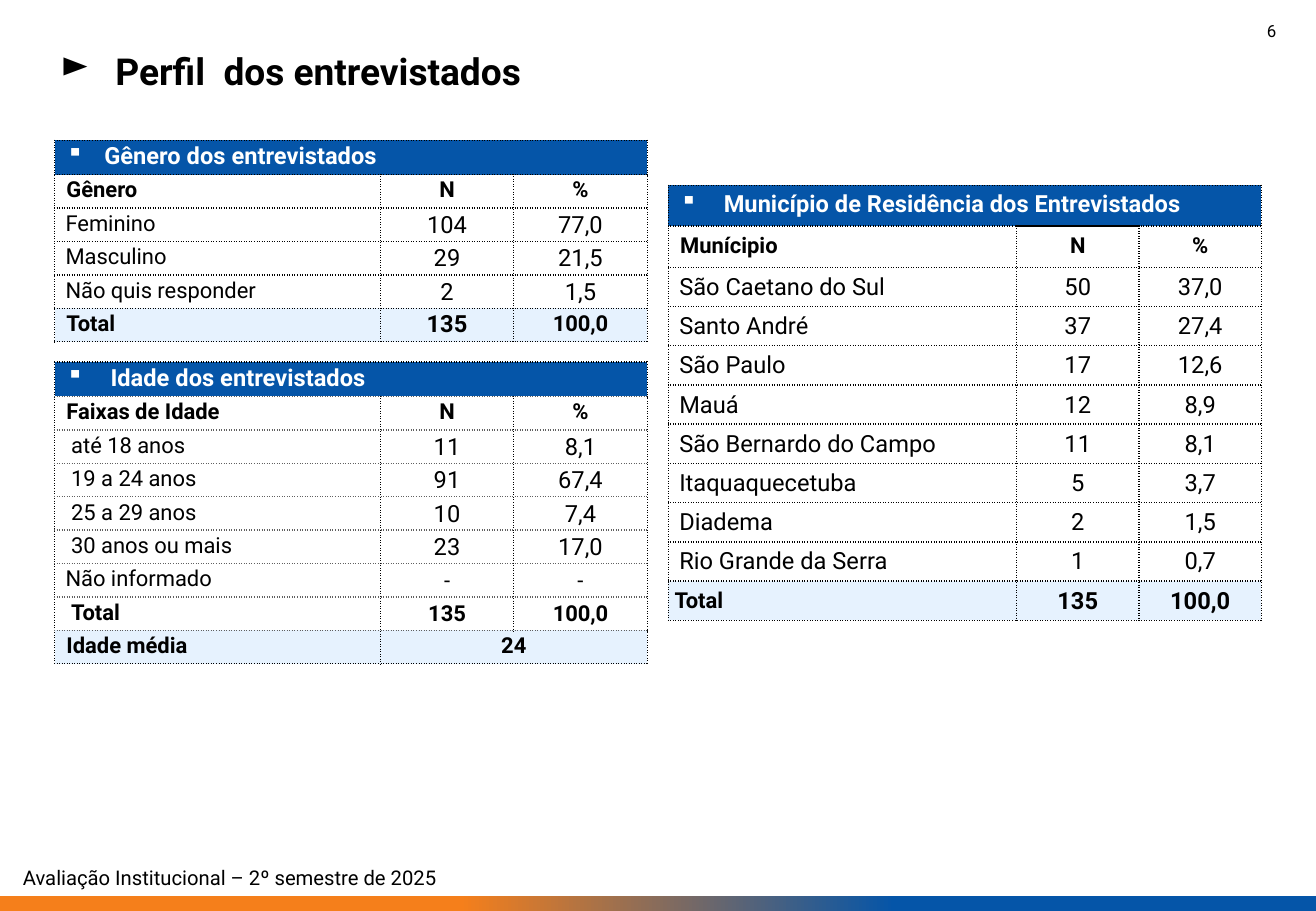
from dataclasses import dataclass
from typing import Any

from lxml import etree
from pptx import Presentation
from pptx import util as u
from pptx.dml import color
from pptx.enum import shapes, text
from pptx.oxml import ns

COLORS = {
    "black": "000000",
    "white": "FFFFFF",
    "gray": "606060",
    "blue": "0555A8",
    "orange": "F57F1B",
    "pale": "E6F2FE",
}
FONT = "Roboto"
LEFT, CENTER, RIGHT = text.PP_ALIGN.LEFT, text.PP_ALIGN.CENTER, text.PP_ALIGN.RIGHT
MIDDLE = text.MSO_ANCHOR.MIDDLE
HEADER_INSET = 0.25
TIGHT_INSET = 0.02


@dataclass(frozen=True)
class Row:
    label: str
    values: tuple[str, ...]
    bold: bool = False
    fill: str = "white"
    inset: float = 0.23
    label_size: int = 13
    value_sizes: tuple[int, ...] = (14, 14)
    label_spacing: float = 0.8
    value_spacing: float = 1.0


@dataclass(frozen=True)
class ProfileTable:
    title: str
    title_indent: float
    left: float
    top: float
    widths: tuple[float, float, float]
    title_height: float
    row_height: float
    rows: list[Row]
    heading_height: float
    line: str = "black"
    solid_above_n: bool = False


def heading(label: str) -> Row:
    return Row(label, ("N", "%"), True, inset=HEADER_INSET,
               value_sizes=(13, 13), value_spacing=0.8)


def city(name: str, count: str, share: str) -> Row:
    return Row(name, (count, share), label_size=14, label_spacing=1.0)


def age(label: str, count: str, share: str) -> Row:
    return Row(label, (count, share), inset=0.35)


LEFT_GRID: dict[str, Any] = {
    "left": 1.14, "widths": (6.81, 2.79, 2.79),
    "title_height": 0.72, "heading_height": 0.7, "row_height": 0.7,
}

TABLES = [
    ProfileTable("Gênero dos entrevistados", 0.79, top=2.93, **LEFT_GRID, rows=[
        heading("Gênero"),
        Row("Feminino", ("104", "77,0")),
        Row("Masculino", ("29", "21,5")),
        Row("Não quis responder", ("2", "1,5")),
        Row("Total", ("135", "100,0"), True, "pale", HEADER_INSET,
            value_sizes=(14, 13), value_spacing=0.8),
    ]),
    ProfileTable("Idade dos entrevistados", 0.92, top=7.57, line="gray", **LEFT_GRID, rows=[
        heading("Faixas de Idade"),
        age("até 18 anos", "11", "8,1"),
        age("19 a 24 anos", "91", "67,4"),
        age("25 a 29 anos", "10", "7,4"),
        age("30 anos ou mais", "23", "17,0"),
        Row("Não informado", ("-", "-"), value_sizes=(13, 13)),
        Row("Total", ("135", "100,0"), True, inset=0.35, value_sizes=(13, 13)),
        Row("Idade média", ("24",), True, "pale", HEADER_INSET,
            value_sizes=(13,), value_spacing=0.8),
    ]),
    ProfileTable(
        "Município de Residência dos Entrevistados", 0.91, 13.97, 3.87, (7.28, 2.56, 2.56),
        0.86, 0.82, heading_height=0.86, solid_above_n=True, rows=[
            heading("Munícipio"),
            city("São Caetano do Sul", "50", "37,0"),
            city("Santo André", "37", "27,4"),
            city("São Paulo", "17", "12,6"),
            city("Mauá", "12", "8,9"),
            city("São Bernardo do Campo", "11", "8,1"),
            city("Itaquaquecetuba", "5", "3,7"),
            city("Diadema", "2", "1,5"),
            city("Rio Grande da Serra", "1", "0,7"),
            Row("Total", ("135", "100,0"), True, "pale", 0.13, label_spacing=1.0),
        ]),
]


def rgb(name: str) -> color.RGBColor:
    return color.RGBColor.from_string(COLORS[name])


def apply(target: Any, values: dict[str, Any]) -> None:
    for name, value in values.items():
        setattr(target, name, value)


def write(paragraph: Any, words: str, size: int, bold: bool = False, ink: str = "black",
          align: Any = LEFT, spacing: float = 1.0) -> None:
    apply(paragraph, {"alignment": align, "line_spacing": spacing})
    run = paragraph.add_run()
    run.text = words
    apply(run.font, {"name": FONT, "size": u.Pt(size), "bold": bold})
    run.font.color.rgb = rgb(ink)


def add_bullet(paragraph: Any, mark: str, ink: str, margin: float, hanging: float) -> None:
    properties = paragraph._p.get_or_add_pPr()
    properties.set("marL", str(u.Cm(margin)))
    properties.set("indent", str(-u.Cm(hanging)))
    tint = etree.SubElement(properties, ns.qn("a:buClr"))
    etree.SubElement(tint, ns.qn("a:srgbClr"), val=COLORS[ink])
    etree.SubElement(properties, ns.qn("a:buChar"), char=mark)


def add_border(cell: Any, edge: str, ink: str, width: float, dash: str) -> None:
    line = etree.SubElement(cell._tc.get_or_add_tcPr(), ns.qn(f"a:{edge}"), w=str(u.Pt(width)))
    fill = etree.SubElement(line, ns.qn("a:solidFill"))
    etree.SubElement(fill, ns.qn("a:srgbClr"), val=COLORS[ink])
    etree.SubElement(line, ns.qn("a:prstDash"), val=dash)


def style_cell(cell: Any, row: int, column: int, last_row: int, spec: ProfileTable) -> None:
    outer = {"lnL": column == 0, "lnR": column == 2, "lnT": row == 0, "lnB": row == last_row}
    for edge, is_outer in outer.items():
        if edge == "lnL" and cell.is_spanned:
            continue
        solid = spec.solid_above_n and (row, column, edge) == (1, 1, "lnT")
        inner_rule = edge in ("lnT", "lnB") and not is_outer and row > 0
        add_border(cell, edge, spec.line if inner_rule else "black",
                   0.75 if is_outer else 1, "solid" if solid else "sysDot")
    fill = "blue" if row == 0 else spec.rows[row - 1].fill
    cell.fill.solid()
    cell.fill.fore_color.rgb = rgb(fill)
    apply(cell, {"vertical_anchor": MIDDLE, "margin_left": u.Cm(TIGHT_INSET),
                 "margin_right": u.Cm(TIGHT_INSET), "margin_top": u.Cm(TIGHT_INSET),
                 "margin_bottom": 0})


def draw_table(slide: Any, spec: ProfileTable) -> None:
    last_row = len(spec.rows)
    heights = [spec.title_height, spec.heading_height] + [spec.row_height] * (last_row - 1)
    table = slide.shapes.add_table(
        last_row + 1, 3, u.Cm(spec.left), u.Cm(spec.top),
        u.Cm(sum(spec.widths)), u.Cm(sum(heights))).table
    apply(table, {"first_row": False, "horz_banding": False})
    for column, width in zip(table.columns, spec.widths):
        column.width = u.Cm(width)
    for table_row, height in zip(table.rows, heights):
        table_row.height = u.Cm(height)
    table.cell(0, 0).merge(table.cell(0, 2))
    for index, row in enumerate(spec.rows, 1):
        if len(row.values) == 1:
            table.cell(index, 1).merge(table.cell(index, 2))
    for index in range(last_row + 1):
        for column in range(3):
            style_cell(table.cell(index, column), index, column, last_row, spec)

    title_cell = table.cell(0, 0)
    title_cell.margin_left = u.Cm(HEADER_INSET)
    paragraph = title_cell.text_frame.paragraphs[0]
    add_bullet(paragraph, "▪", "white", spec.title_indent, spec.title_indent)
    write(paragraph, spec.title, 14, True, "white", spacing=0.8)
    for index, row in enumerate(spec.rows, 1):
        label_cell = table.cell(index, 0)
        label_cell.margin_left = u.Cm(row.inset)
        write(label_cell.text_frame.paragraphs[0], row.label, row.label_size, row.bold,
              spacing=row.label_spacing)
        for column, (value, size) in enumerate(zip(row.values, row.value_sizes), 1):
            write(table.cell(index, column).text_frame.paragraphs[0], value, size, row.bold,
                  align=CENTER, spacing=row.value_spacing)


def draw_note(slide: Any, words: str, size: int, align: Any,
              box: tuple[float, float, float, float]) -> None:
    frame = slide.shapes.add_textbox(*map(u.Cm, box)).text_frame
    frame.word_wrap = True
    write(frame.paragraphs[0], words, size, align=align)


def draw_title(slide: Any) -> None:
    title = slide.shapes.title
    apply(title, {"left": u.Cm(0.15), "top": u.Cm(0.82),
                  "width": u.Cm(15.4), "height": u.Cm(1.3)})
    apply(title.text_frame, {"vertical_anchor": MIDDLE, "word_wrap": True,
                             "auto_size": text.MSO_AUTO_SIZE.NONE})
    paragraph = title.text_frame.paragraphs[0]
    add_bullet(paragraph, "►", "black", 2.01, 1.15)
    write(paragraph, "Perfil  dos entrevistados", 22, True)


def draw_footer_bar(slide: Any, width: int) -> None:
    bar = slide.shapes.add_shape(shapes.MSO_SHAPE.RECTANGLE, 0, u.Cm(18.73), width, u.Cm(0.32))
    bar.shadow.inherit = False
    bar.line.fill.background()
    bar.fill.gradient()
    bar.fill.gradient_angle = 0
    for stop, (ink, position) in zip(bar.fill.gradient_stops, (("orange", 0.35), ("blue", 0.68))):
        stop.color.rgb = rgb(ink)
        stop.position = position


def main() -> None:
    presentation = Presentation()
    apply(presentation, {"slide_width": u.Cm(27.51), "slide_height": u.Cm(19.05)})
    slide = presentation.slides.add_slide(presentation.slide_layouts[5])
    draw_footer_bar(slide, presentation.slide_width)
    draw_note(slide, "Avaliação Institucional – 2º semestre de 2025", 12, LEFT,
              (0.23, 17.96, 27.05, 0.77))
    for spec in TABLES:
        draw_table(slide, spec)
    draw_title(slide)
    draw_note(slide, "6", 10, RIGHT, (21.11, 0.3, 5.82, 1.02))
    presentation.save("out.pptx")


if __name__ == "__main__":
    main()
